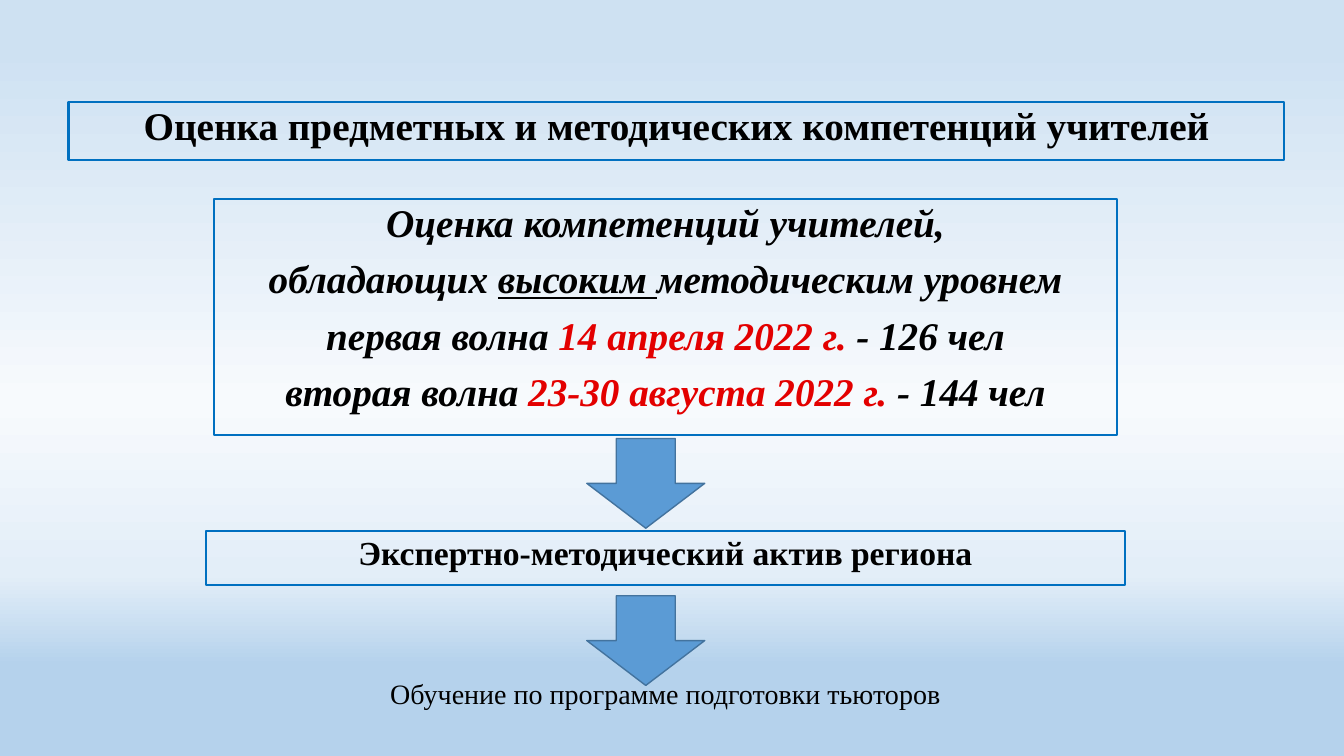
from dataclasses import dataclass

from lxml import etree
from pptx import Presentation
from pptx.dml.color import RGBColor
from pptx.enum.shapes import MSO_SHAPE as Shp
from pptx.enum.text import MSO_ANCHOR as Anchor, PP_ALIGN as Align
from pptx.oxml.ns import qn
from pptx.slide import Slide
from pptx.util import Inches, Pt

FONT = "Times New Roman"
BLACK = RGBColor(0x00, 0x00, 0x00)
RED = RGBColor(0xE3, 0x00, 0x00)
FRAME_BLUE = RGBColor(0x00, 0x70, 0xC0)
ARROW_FILL = RGBColor(0x5B, 0x9B, 0xD5)
ARROW_LINE = RGBColor(0x43, 0x73, 0x9E)
SKY_STOPS = [
    (6, RGBColor(0xCE, 0xE1, 0xF2)),
    (53, RGBColor(0xF7, 0xFA, 0xFD)),
    (76, RGBColor(0xE3, 0xEE, 0xF8)),
    (88, RGBColor(0xB5, 0xD2, 0xEC)),
]


@dataclass
class Run:
    text: str
    color: RGBColor = BLACK
    underline: bool = False


@dataclass
class Line:
    runs: list[Run]
    shift: float = 0  # hanging indent in inches, moves a centred line left


@dataclass
class Box:
    left: float
    top: float
    width: float
    height: float
    size: int
    lines: list[Line]
    italic: bool = False
    framed: bool = True


BOXES = [
    Box(0.68, 1.01, 12.06, 0.58, 28,
        [Line([Run("Оценка предметных и методических компетенций учителей")])]),
    Box(2.12, 1.97, 8.96, 2.35, 28, [
        Line([Run("Оценка компетенций учителей,")], 0.1),
        Line([Run("обладающих "), Run("высоким ", underline=True),
              Run("методическим уровнем")], 0.2),
        Line([Run("первая волна"), Run(" 14 апреля 2022 г. ", RED), Run("- 126 чел")]),
        Line([Run("вторая волна"), Run(" 23-30 августа 2022 г. ", RED),
              Run("- 144 чел")], 0.4),
    ], italic=True),
    Box(2.04, 5.27, 9.12, 0.53, 24,
        [Line([Run("Экспертно-методический актив региона")], 0.08)]),
    Box(2.47, 6.66, 8.26, 0.44, 20,
        [Line([Run("Обучение по программе подготовки тьюторов")], 0.14)], framed=False),
]
ARROW_TOPS = [4.35, 5.91]


def paint_background(slide: Slide) -> None:
    fill = slide.background.fill
    fill.gradient()
    fill.gradient_angle = 270
    stops = slide.background._cSld.find(".//" + qn("a:gsLst"))
    stops.clear()
    for percent, color in SKY_STOPS:
        stop = etree.SubElement(stops, qn("a:gs"), pos=str(percent * 1000))
        etree.SubElement(stop, qn("a:srgbClr"), val=str(color))


def add_box(slide: Slide, box: Box) -> None:
    area = [Inches(v) for v in (box.left, box.top, box.width, box.height)]
    if box.framed:
        sp = slide.shapes.add_shape(Shp.RECTANGLE, *area)
        sp.shadow.inherit = False
        sp.fill.background()
        sp.line.color.rgb = FRAME_BLUE
        sp.line.width = Pt(1.5)
    else:
        sp = slide.shapes.add_textbox(*area)
    tf = sp.text_frame
    tf.word_wrap = True
    tf.vertical_anchor = Anchor.TOP
    for i, line in enumerate(box.lines):
        p = tf.paragraphs[0] if i == 0 else tf.add_paragraph()
        p.alignment = Align.CENTER
        p.font.name, p.font.size = FONT, Pt(box.size)
        p.font.bold, p.font.italic = box.framed, box.italic
        if box.framed:
            p.line_spacing = 0.9
            p.space_before = Pt(10)
        if line.shift:
            p._p.get_or_add_pPr().set("indent", str(-Inches(line.shift)))
        for run in line.runs:
            r = p.add_run()
            r.text = run.text
            r.font.color.rgb = run.color
            if run.underline:
                r.font.underline = True


def add_arrow(slide: Slide, top: float) -> None:
    sp = slide.shapes.add_shape(
        Shp.DOWN_ARROW, Inches(5.82), Inches(top), Inches(1.17), Inches(0.89))
    sp.shadow.inherit = False
    sp.fill.solid()
    sp.fill.fore_color.rgb = ARROW_FILL
    sp.line.color.rgb = ARROW_LINE
    sp.line.width = Pt(1)


def main() -> None:
    prs = Presentation()
    prs.slide_width, prs.slide_height = Inches(13.33), Inches(7.5)
    slide = prs.slides.add_slide(prs.slide_layouts[6])
    paint_background(slide)

    # Text blocks from top to bottom
    for box in BOXES:
        add_box(slide, box)

    # Arrows between the stages
    for top in ARROW_TOPS:
        add_arrow(slide, top)

    prs.save("out.pptx")


if __name__ == "__main__":
    main()
